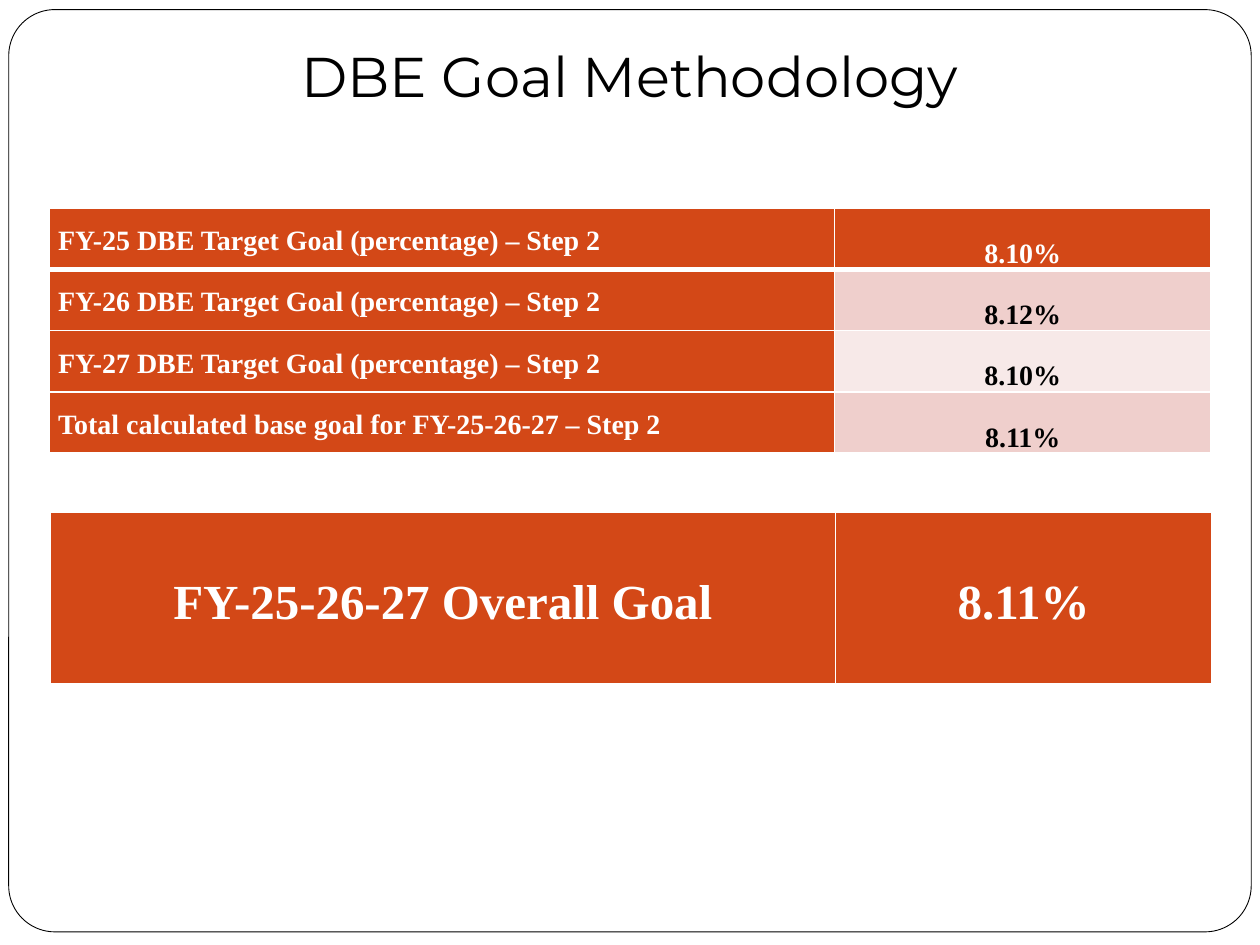
from lxml import etree
from pptx import Presentation
from pptx import util as u
from pptx.dml.color import RGBColor
from pptx.enum import shapes, text
from pptx.oxml.ns import qn

BLACK = RGBColor(0x00, 0x00, 0x00)
WHITE = RGBColor(0xFF, 0xFF, 0xFF)
ORANGE = RGBColor(0xD3, 0x48, 0x17)
ROSE = RGBColor(0xEF, 0xCF, 0xCC)
PALE_ROSE = RGBColor(0xF7, 0xE9, 0xE8)

LEFT, CENTER = text.PP_ALIGN.LEFT, text.PP_ALIGN.CENTER
MIDDLE, BOTTOM = text.MSO_ANCHOR.MIDDLE, text.MSO_ANCHOR.BOTTOM
COLUMN_WIDTHS = (448.5, 215.3)


def write(frame, words, *, size, font="Times New Roman", color=WHITE,
          bold=False, align=CENTER, spacing=None):
    para = frame.paragraphs[0]
    para.alignment = align
    para.line_spacing = spacing
    span = para.add_run()
    span.text = words
    span.font.name = font
    span.font.size = u.Pt(size)
    span.font.bold = bold
    span.font.color.rgb = color


def add_frame(page):
    box = page.shapes.add_shape(shapes.MSO_SHAPE.ROUNDED_RECTANGLE,
                                u.Pt(5), u.Pt(5.5), u.Pt(710), u.Pt(527))
    box.adjustments[0] = 0.05
    box.shadow.inherit = False
    box.fill.solid()
    box.fill.fore_color.rgb = WHITE
    box.line.color.rgb = BLACK
    box.line.width = u.Pt(0.5)


def add_title(page, words):
    box = page.shapes.add_textbox(u.Pt(72), u.Pt(20), u.Pt(576), u.Pt(46))
    box.text_frame.word_wrap = True
    write(box.text_frame, words, size=32, font="Montserrat", color=BLACK)


def set_borders(cell, bottom):
    properties = cell._tc.get_or_add_tcPr()
    widths = {"a:lnL": 1, "a:lnR": 1, "a:lnT": 1, "a:lnB": bottom}
    for position, (side, width) in enumerate(widths.items()):
        line = etree.Element(qn(side), w=str(u.Pt(width)))
        fill = etree.SubElement(line, qn("a:solidFill"))
        etree.SubElement(fill, qn("a:srgbClr"), val=str(WHITE))
        properties.insert(position, line)


def fill_cell(cell, words, *, fill, anchor=MIDDLE, bottom=1, **style):
    cell.margin_left = cell.margin_right = u.Pt(5)
    cell.margin_top = cell.margin_bottom = 0
    cell.vertical_anchor = anchor
    cell.fill.solid()
    cell.fill.fore_color.rgb = fill
    set_borders(cell, bottom)
    write(cell.text_frame, words, bold=True, spacing=1.15, **style)


def add_grid(page, left, top, row_height, row_count):
    table = page.shapes.add_table(
        row_count, len(COLUMN_WIDTHS), u.Pt(left), u.Pt(top),
        u.Pt(sum(COLUMN_WIDTHS)), u.Pt(row_height * row_count)).table
    for column, width in zip(table.columns, COLUMN_WIDTHS):
        column.width = u.Pt(width)
    for row in table.rows:
        row.height = u.Pt(row_height)
    return table


def main():
    deck = Presentation()
    deck.slide_width, deck.slide_height = u.Pt(720), u.Pt(540)
    page = deck.slides.add_slide(deck.slide_layouts[6])
    add_frame(page)
    add_title(page, "DBE Goal Methodology")

    # Yearly goals, first row set off by a thick rule
    goals = [
        ("FY-25 DBE Target Goal (percentage) – Step 2", "8.10%", ORANGE, WHITE),
        ("FY-26 DBE Target Goal (percentage) – Step 2", "8.12%", ROSE, BLACK),
        ("FY-27 DBE Target Goal (percentage) – Step 2", "8.10%", PALE_ROSE, BLACK),
        ("Total calculated base goal for FY-25-26-27 – Step 2", "8.11%", ROSE, BLACK),
    ]
    table = add_grid(page, 28.3, 119, 35, len(goals))
    for index, (label, value, fill, color) in enumerate(goals):
        bottom = 3 if index == 0 else 1
        fill_cell(table.cell(index, 0), label, fill=ORANGE, bottom=bottom,
                  size=16, align=LEFT)
        fill_cell(table.cell(index, 1), value, fill=fill, bottom=bottom,
                  size=16, color=color, anchor=BOTTOM)

    # Overall goal
    overall = add_grid(page, 28.8, 292.5, 99, 1)
    for column, words in enumerate(("FY-25-26-27 Overall Goal", "8.11%")):
        fill_cell(overall.cell(0, column), words, fill=ORANGE, bottom=3, size=28)

    deck.save("out.pptx")


if __name__ == "__main__":
    main()
